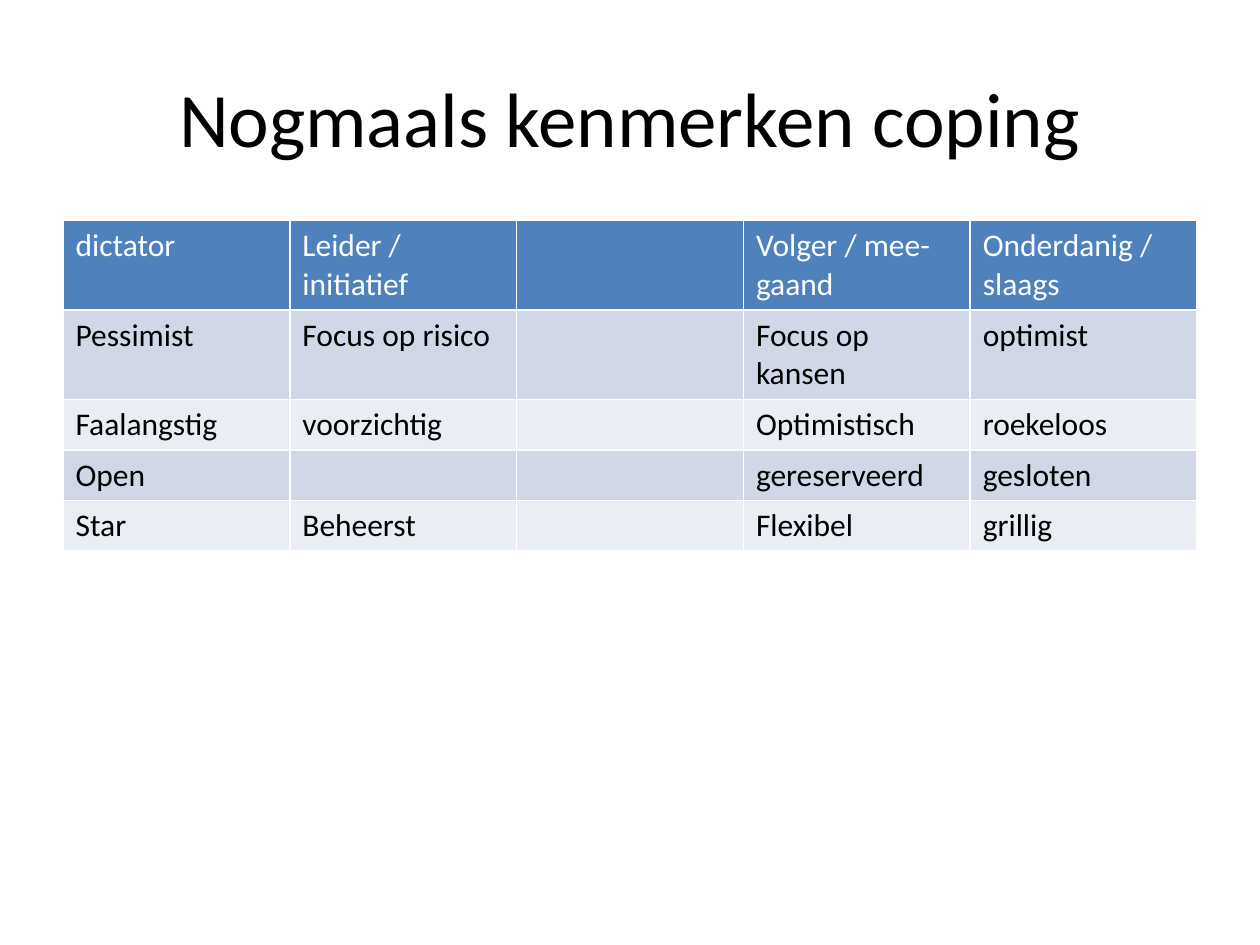
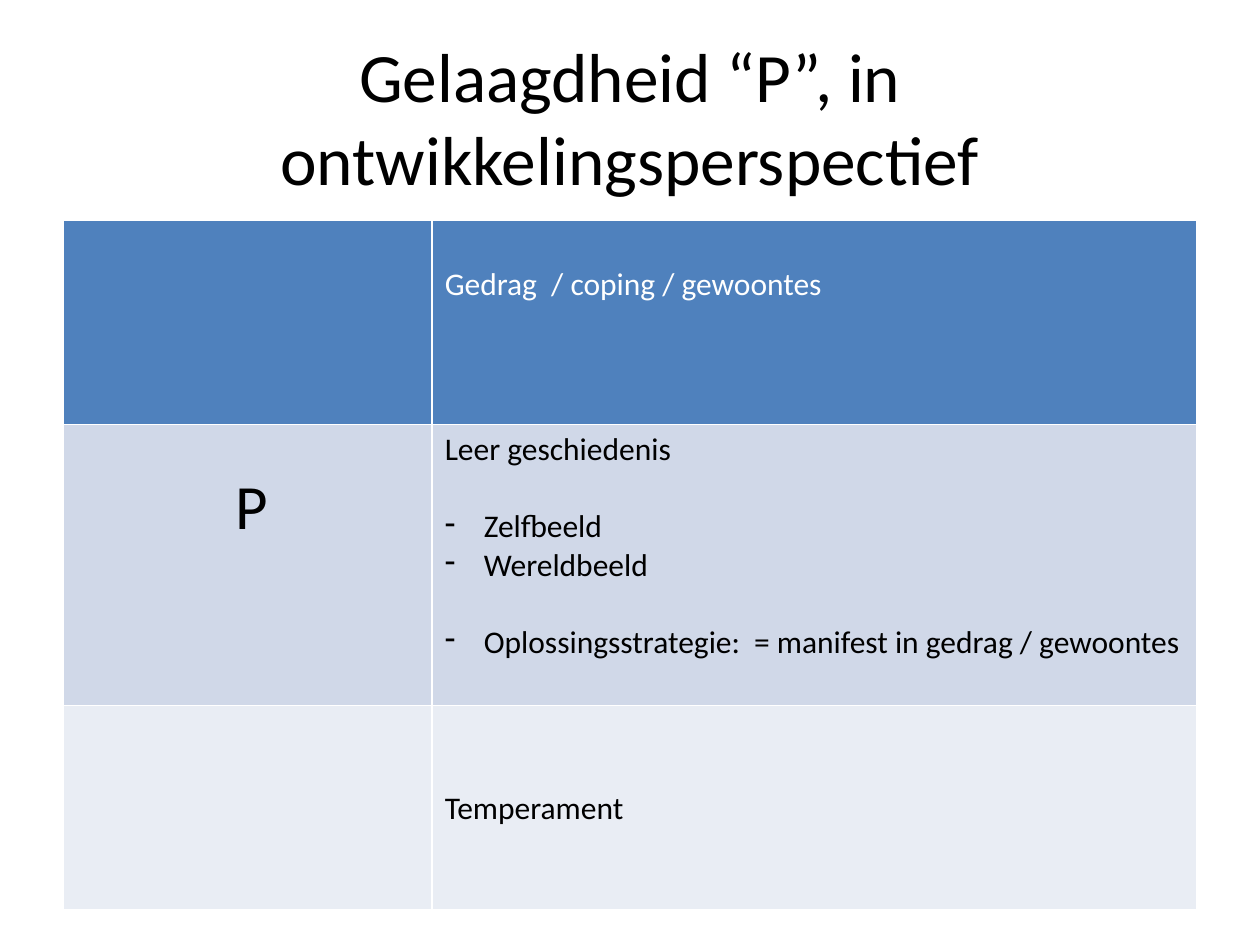
from dataclasses import dataclass

from lxml import etree
from pptx import Presentation
from pptx.dml.color import RGBColor
from pptx.enum.text import MSO_ANCHOR, PP_ALIGN
from pptx.oxml.ns import qn
from pptx.util import Pt

CENTER = PP_ALIGN.CENTER
MIDDLE = MSO_ANCHOR.MIDDLE
PX = 9144


@dataclass(frozen=True)
class Theme:
    font: str = "Calibri"
    dark: RGBColor = RGBColor(0x00, 0x00, 0x00)
    light: RGBColor = RGBColor(0xFF, 0xFF, 0xFF)
    header: RGBColor = RGBColor(0x4F, 0x81, 0xBD)
    bands: tuple = (RGBColor(0xE9, 0xED, 0xF4), RGBColor(0xD0, 0xD8, 0xE8))
    title_size: float = 44
    long_title_size: float = 39.6
    body_size: float = 18
    letter_size: float = 36
    line_gap: float = 22


theme = Theme()


def format_runs(paragraph, size, color):
    for run in paragraph.runs:
        run.font.name = theme.font
        run.font.size = Pt(size)
        run.font.bold = False
        run.font.color.rgb = color


def add_table_slide(title, title_size, widths, heights, rows):
    slide = deck.slides.add_slide(deck.slide_layouts[6])
    heading = slide.shapes.add_textbox(50 * PX, 30 * PX, 900 * PX, 125 * PX).text_frame
    heading.word_wrap = True
    heading.vertical_anchor = MIDDLE
    heading.text = title
    heading.paragraphs[0].alignment = CENTER
    format_runs(heading.paragraphs[0], title_size, theme.dark)

    table = slide.shapes.add_table(
        len(rows), len(widths), 50 * PX, 175 * PX, sum(widths) * PX, sum(heights) * PX
    ).table
    for column, width in zip(table.columns, widths):
        column.width = width * PX
    for r, (row, height) in enumerate(zip(rows, heights)):
        table.rows[r].height = height * PX
        for c, text in enumerate(row):
            cell = table.cell(r, c)
            cell.fill.solid()
            cell.fill.fore_color.rgb = theme.bands[r % 2] if r else theme.header
            cell.text_frame.text = text
            for paragraph in cell.text_frame.paragraphs:
                format_runs(paragraph, theme.body_size, theme.dark if r else theme.light)
    return table


deck = Presentation()
deck.slide_width = 1000 * PX
deck.slide_height = 750 * PX

add_table_slide(
    "Nogmaals kenmerken coping",
    theme.title_size,
    [180] * 5,
    [71, 71, 40, 40, 40],
    [
        ["dictator", "Leider / initiatief", "", "Volger / mee-gaand", "Onderdanig / slaags"],
        ["Pessimist", "Focus op risico", "", "Focus op kansen", "optimist"],
        ["Faalangstig", "voorzichtig", "", "Optimistisch", "roekeloos"],
        ["Open", "", "", "gereserveerd", "gesloten"],
        ["Star", "Beheerst", "", "Flexibel", "grillig"],
    ],
)

learning = [
    "Leer geschiedenis",
    "Zelfbeeld",
    "Wereldbeeld",
    "Oplossingsstrategie:  = manifest in gedrag / gewoontes",
]
layers = add_table_slide(
    "Gelaagdheid “P”, in ontwikkelingsperspectief",
    theme.long_title_size,
    [293, 607],
    [162, 223, 162],
    [
        ["", "Gedrag  / coping / gewoontes"],
        ["P", "\n".join(learning)],
        ["", "Temperament"],
    ],
)

for row, column, lines_down in [(0, 1, 1), (1, 0, 1), (2, 1, 2)]:
    layers.cell(row, column).margin_top = (5 + 31 * lines_down) * PX

person = layers.cell(1, 0)
person.margin_left = 137 * PX
format_runs(person.text_frame.paragraphs[0], theme.letter_size, theme.dark)

beliefs = layers.cell(1, 1).text_frame.paragraphs[1:]
for belief in beliefs:
    properties = belief._p.get_or_add_pPr()
    properties.set("marL", str(31 * PX))
    properties.set("indent", str(-31 * PX))
    etree.SubElement(properties, qn("a:buChar")).set("char", "-")
for belief in (beliefs[0], beliefs[-1]):
    belief.space_before = Pt(theme.line_gap)

deck.save("out.pptx")
